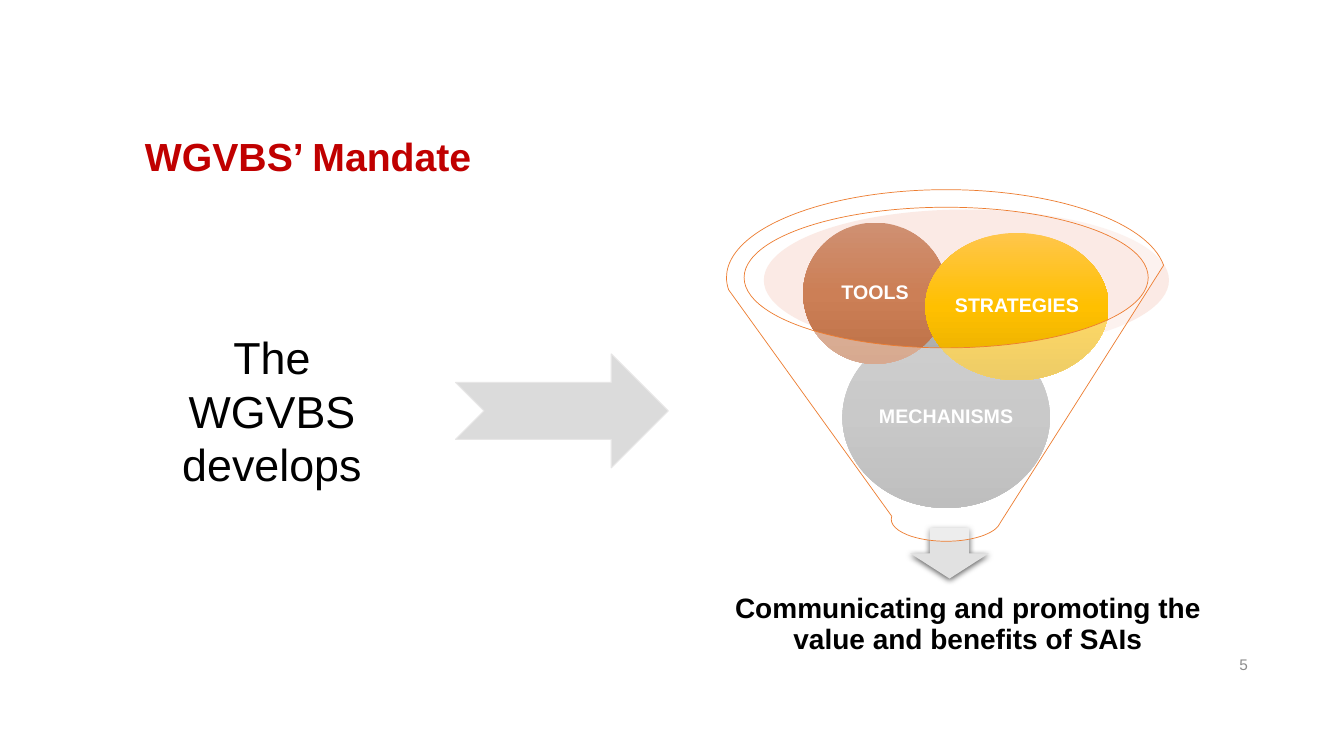
from copy import deepcopy
from lxml import etree
from pptx import Presentation, util as u
from pptx.dml.color import RGBColor
from pptx.enum import shapes, text
from pptx.oxml.ns import qn

WHITE = RGBColor(255, 255, 255)
BLACK = RGBColor(0, 0, 0)
RED = RGBColor(0xC0, 0, 0)
ORANGE = RGBColor(0xED, 0x7D, 0x31)
PEACH = RGBColor(0xF6, 0xCC, 0xBE)
SILVER = RGBColor(0xDB, 0xDB, 0xDB)
PALE = RGBColor(0xE1, 0xE1, 0xE1)
EDGE = RGBColor(0xE7, 0xE6, 0xE6)
GREY = RGBColor(0x8C, 0x8C, 0x8C)
GREYS = [RGBColor(0xAF, 0xAF, 0xAF), RGBColor(0xA5, 0xA5, 0xA5), RGBColor(0x93, 0x93, 0x93)]
BROWNS = [RGBColor(0xCF, 0x90, 0x72), RGBColor(0xCC, 0x7F, 0x56), RGBColor(0xBD, 0x71, 0x47)]
GOLDS = [RGBColor(0xFF, 0xC6, 0x4B), RGBColor(0xFF, 0xC0, 0), RGBColor(0xE3, 0xAB, 0)]

# Boxes are left, top, width, height in centimetres
TITLE = ("WGVBS’ Mandate", (3.4, 2.84, 22.73, 3.61))
LEAD = ("The WGVBS develops", (3.4, 8.18, 6.91, 4.37))
GOAL = ("Communicating and promoting the value and benefits of SAIs",
        (18.03, 14.55, 12.73, 2.39))
PAGE = ("5", (24.08, 16.23, 7.62, 1.02))
BALLS = [
    ("MECHANISMS", (21.23, 8.23, 5.23, 4.57), GREYS),
    ("TOOLS", (20.24, 5.61, 3.63, 3.56), BROWNS),
    ("STRATEGIES", (23.32, 5.87, 4.62, 3.71), GOLDS),
]
RIM = (19.25, 5.28, 10.21, 3.56)
DROP = (22.94, 13.31, 1.98, 1.27)
CONE = (18.31, 4.78, 11.07, 8.86)
ARROW = (11.48, 8.92, 5.36, 2.87)

MID = text.MSO_ANCHOR.MIDDLE
CENTER = text.PP_ALIGN.CENTER
KIND = shapes.MSO_SHAPE


def write(shape, words, size, color=BLACK, bold=False, align=CENTER,
          anchor=MID, space=None, inset=None, wrap=True):
    frame = shape.text_frame
    frame.word_wrap, frame.vertical_anchor = wrap, anchor
    if inset is not None:
        frame.margin_left = frame.margin_right = u.Cm(inset)
        frame.margin_top = frame.margin_bottom = u.Cm(inset)
    para = frame.paragraphs[0]
    para.alignment, para.line_spacing = align, space
    run = para.add_run()
    run.text = words
    font = run.font
    font.name, font.size, font.bold = "Arial", u.Pt(size), bold
    font.color.rgb = color


def place(box):
    return [u.Cm(v) for v in box]


def label(item, *args, **kw):
    words, box = item
    write(slide.shapes.add_textbox(*place(box)), words, *args, **kw)


def draw(kind, box, fill=None, line=None, width=0.5, alpha=None):
    shape = slide.shapes.add_shape(kind, *place(box))
    shape.shadow.inherit = False
    if fill is not None:
        shape.fill.solid()
        shape.fill.fore_color.rgb = fill
    if alpha:
        tint = shape.fill._xPr.find(qn("a:solidFill"))[0]
        etree.SubElement(tint, qn("a:alpha"), val=str(alpha * 1000))
    if line is None:
        shape.line.fill.background()
    else:
        shape.line.color.rgb = line
        shape.line.width = u.Pt(width)
    return shape


def shade(shape, colors):
    """Fill from top to bottom with three evenly spaced colours."""
    fill = shape.fill
    fill.gradient()
    fill.gradient_angle = 270
    stops = shape.element.spPr.find(qn("a:gradFill")).find(qn("a:gsLst"))
    stops.insert(1, deepcopy(stops[0]))
    for i, (stop, color) in enumerate(zip(fill.gradient_stops, colors)):
        stop.color.rgb = color
        stop.position = i / 2


def cast(shape):
    """Give the shape a soft shadow below."""
    glow = shape.element.spPr.find(qn("a:effectLst"))
    outer = etree.SubElement(glow, qn("a:outerShdw"), blurRad=str(u.Pt(4.5)),
                             dist=str(u.Pt(1.5)), dir="5400000", rotWithShape="0")
    tint = etree.SubElement(outer, qn("a:srgbClr"), val="000000")
    etree.SubElement(tint, qn("a:alpha"), val="63000")


deck = Presentation()
deck.slide_width, deck.slide_height = u.Cm(33.87), u.Cm(19.05)
slide = deck.slides.add_slide(deck.slide_layouts[5])

draw(KIND.OVAL, RIM, PEACH, alpha=40)
cast(draw(KIND.DOWN_ARROW, DROP, PALE))
label(GOAL, 20, bold=True, space=0.9, inset=0.4)
for name, box, colors in BALLS:
    ball = draw(KIND.OVAL, box)
    shade(ball, colors)
    write(ball, name, 14, WHITE, bold=True, space=0.9, inset=0.05, wrap=False)
draw(KIND.FUNNEL, CONE, WHITE, ORANGE, alpha=40)
draw(KIND.NOTCHED_RIGHT_ARROW, ARROW, SILVER, EDGE, 0.75)
label(LEAD, 32, anchor=text.MSO_ANCHOR.TOP)
label(PAGE, 11, GREY, align=text.PP_ALIGN.RIGHT)

title = slide.shapes.title
title.left, title.top, title.width, title.height = place(TITLE[1])
write(title, TITLE[0], 28, RED, bold=True, align=text.PP_ALIGN.LEFT, space=0.9)
title.text_frame.margin_bottom = u.Cm(1.4)

deck.save("out.pptx")
